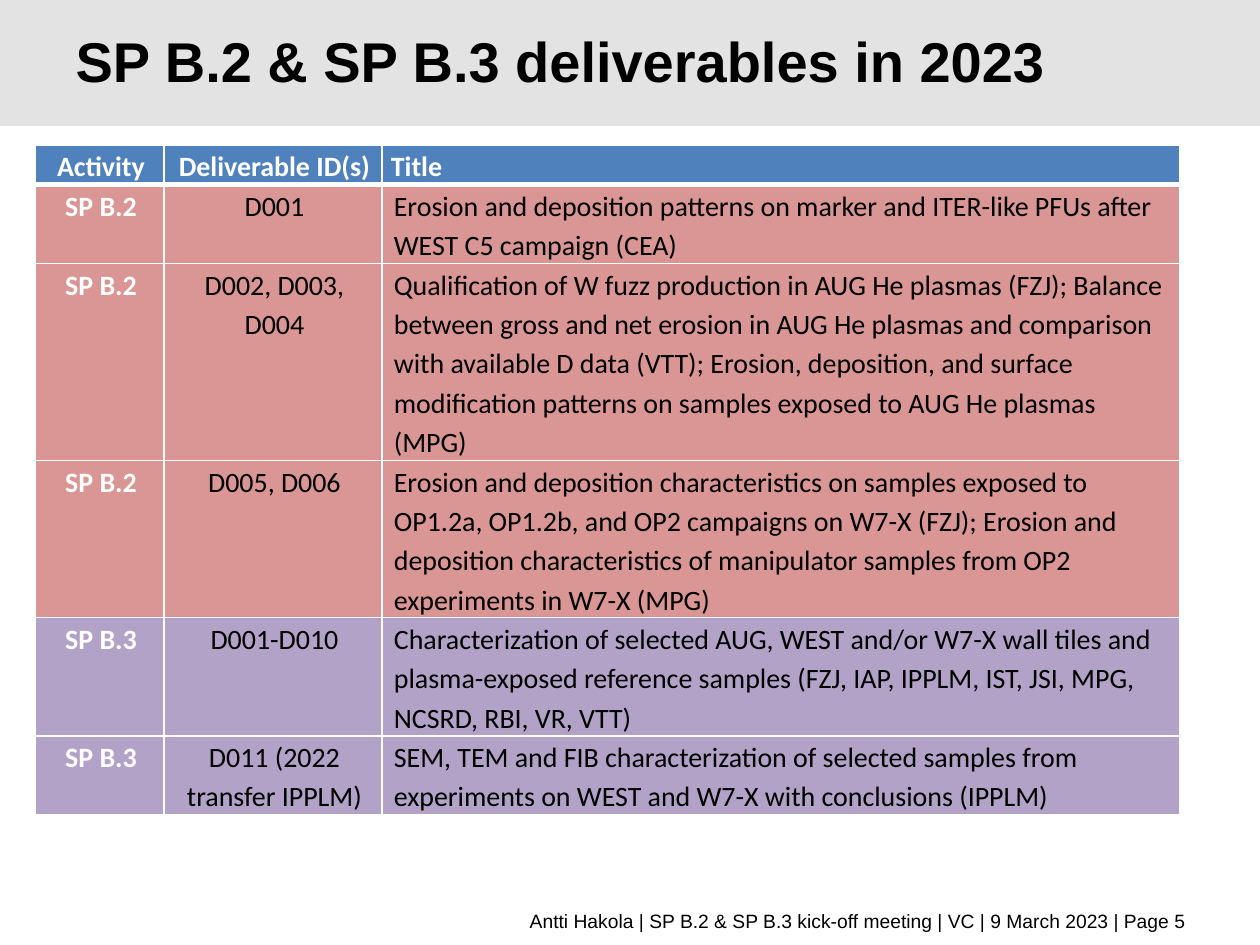
from lxml import etree
from pptx import Presentation
from pptx import util as u
from pptx.dml.color import RGBColor
from pptx.enum import shapes, text
from pptx.oxml.ns import qn

SCALE = 914400 / 126  # EMU per px

BLACK = RGBColor(0x00, 0x00, 0x00)
WHITE = RGBColor(0xFF, 0xFF, 0xFF)
GREY = RGBColor(0xE3, 0xE3, 0xE3)
BLUE = RGBColor(0x4F, 0x81, 0xBD)
RED = RGBColor(0xD9, 0x96, 0x94)
PURPLE = RGBColor(0xB3, 0xA2, 0xC7)

LEFT, MID, RIGHT = text.PP_ALIGN.LEFT, text.PP_ALIGN.CENTER, text.PP_ALIGN.RIGHT
SIDES = ("lnL", "lnR", "lnT", "lnB")

COLS = (129, 218, 798)
# Fill, row height, then the three cell texts
ROWS = (
    (BLUE, 38, "Activity", "Deliverable ID(s)", "Title"),
    (RED, 79, "SP B.2", "D001",
     "Erosion and deposition patterns on marker and ITER-like PFUs after "
     "WEST C5 campaign (CEA)"),
    (RED, 197, "SP B.2", "D002, D003, D004",
     "Qualification of W fuzz production in AUG He plasmas (FZJ); Balance "
     "between gross and net erosion in AUG He plasmas and comparison with "
     "available D data (VTT); Erosion, deposition, and surface modification "
     "patterns on samples exposed to AUG He plasmas (MPG)"),
    (RED, 157, "SP B.2", "D005, D006",
     "Erosion and deposition characteristics on samples exposed to OP1.2a, "
     "OP1.2b, and OP2 campaigns on W7-X (FZJ); Erosion and deposition "
     "characteristics of manipulator samples from OP2 experiments in W7-X (MPG)"),
    (PURPLE, 118, "SP B.3", "D001-D010",
     "Characterization of selected AUG, WEST and/or W7-X wall tiles and "
     "plasma-exposed reference samples (FZJ, IAP, IPPLM, IST, JSI, MPG, "
     "NCSRD, RBI, VR, VTT)"),
    (PURPLE, 79, "SP B.3", "D011 (2022 transfer IPPLM)",
     "SEM, TEM and FIB characterization of selected samples from "
     "experiments on WEST and W7-X with conclusions (IPPLM)"),
)


def px(n):
    return u.Emu(round(n * SCALE))


def put(obj, vals):
    for key, val in vals.items():
        setattr(obj, key, val)


def write(frame, words, font, color, para):
    frame.text = words
    line = frame.paragraphs[0]
    put(line, para)
    put(line.font, font)
    line.font.color.rgb = color
    return line


def place(shape, left, top, width, height):
    put(shape, {"left": px(left), "top": px(top),
                "width": px(width), "height": px(height)})


def edge(cell, side, width):
    line = etree.SubElement(cell._tc.get_or_add_tcPr(), qn("a:" + side),
                            w=str(u.Pt(width)))
    fill = etree.SubElement(line, qn("a:solidFill"))
    etree.SubElement(fill, qn("a:srgbClr"), val=str(WHITE))


def add_band(slide):
    band = slide.shapes.add_shape(shapes.MSO_SHAPE.RECTANGLE, 0, 0, px(1260), px(126))
    band.shadow.inherit = False
    band.fill.solid()
    band.fill.fore_color.rgb = GREY
    band.line.fill.background()
    slide.shapes._spTree.insert(2, band._element)  # behind the title


def add_title(slide, words):
    title = slide.shapes.title
    place(title, 63, 6, 1040, 120)
    frame = title.text_frame
    put(frame, {"vertical_anchor": text.MSO_ANCHOR.MIDDLE, "word_wrap": True,
                "auto_size": text.MSO_AUTO_SIZE.NONE})
    write(frame, words, {"name": "Arial", "size": u.Pt(32), "bold": True}, BLACK,
          {"alignment": LEFT, "line_spacing": u.Pt(32)})


def add_foot(slide, words):
    box = slide.shapes.add_textbox(px(64), px(902), px(1135), px(37))
    frame = box.text_frame
    put(frame, {"vertical_anchor": text.MSO_ANCHOR.MIDDLE, "word_wrap": True})
    write(frame, words, {"name": "Arial", "size": u.Pt(11)}, BLACK,
          {"alignment": RIGHT})


def fill_cell(cell, words, fill, head, col):
    put(cell, {"margin_left": px(9), "margin_right": px(9),
               "margin_top": 0, "margin_bottom": 0})
    bold = head or col == 0
    line = write(cell.text_frame, words,
                 {"name": "Calibri", "size": u.Pt(16), "bold": bold},
                 WHITE if bold else BLACK,
                 {"alignment": LEFT if col == 2 else MID,
                  "line_spacing": 1.15, "space_after": u.Pt(3)})
    if not (head and col == 2):
        line._p.get_or_add_pPr().set("marL", str(px(3)))
    # Borders come before the fill in the cell properties
    for side in SIDES:
        edge(cell, side, 3 if head and side == "lnB" else 1)
    cell.fill.solid()
    cell.fill.fore_color.rgb = fill


def add_grid(slide):
    high = sum(row[1] for row in ROWS)
    grid = slide.shapes.add_table(len(ROWS), len(COLS), px(35), px(145),
                                  px(sum(COLS)), px(high)).table
    for col, width in zip(grid.columns, COLS):
        col.width = px(width)
    for r, (fill, height, *cells) in enumerate(ROWS):
        grid.rows[r].height = px(height)
        for c, words in enumerate(cells):
            fill_cell(grid.cell(r, c), words, fill, r == 0, c)
            if r == 1:  # share the thick line under the header
                top = grid.cell(r, c)._tc.tcPr.find(qn("a:lnT"))
                top.set("w", str(u.Pt(3)))


def main():
    deck = Presentation()
    put(deck, {"slide_width": px(1260), "slide_height": px(945)})
    slide = deck.slides.add_slide(deck.slide_layouts[5])
    add_band(slide)
    add_title(slide, "SP B.2 & SP B.3 deliverables in 2023")
    add_grid(slide)
    add_foot(slide, "Antti Hakola | SP B.2 & SP B.3 kick-off meeting | VC | "
                    "9 March 2023 | Page 5")
    deck.save("out.pptx")


if __name__ == "__main__":
    main()
